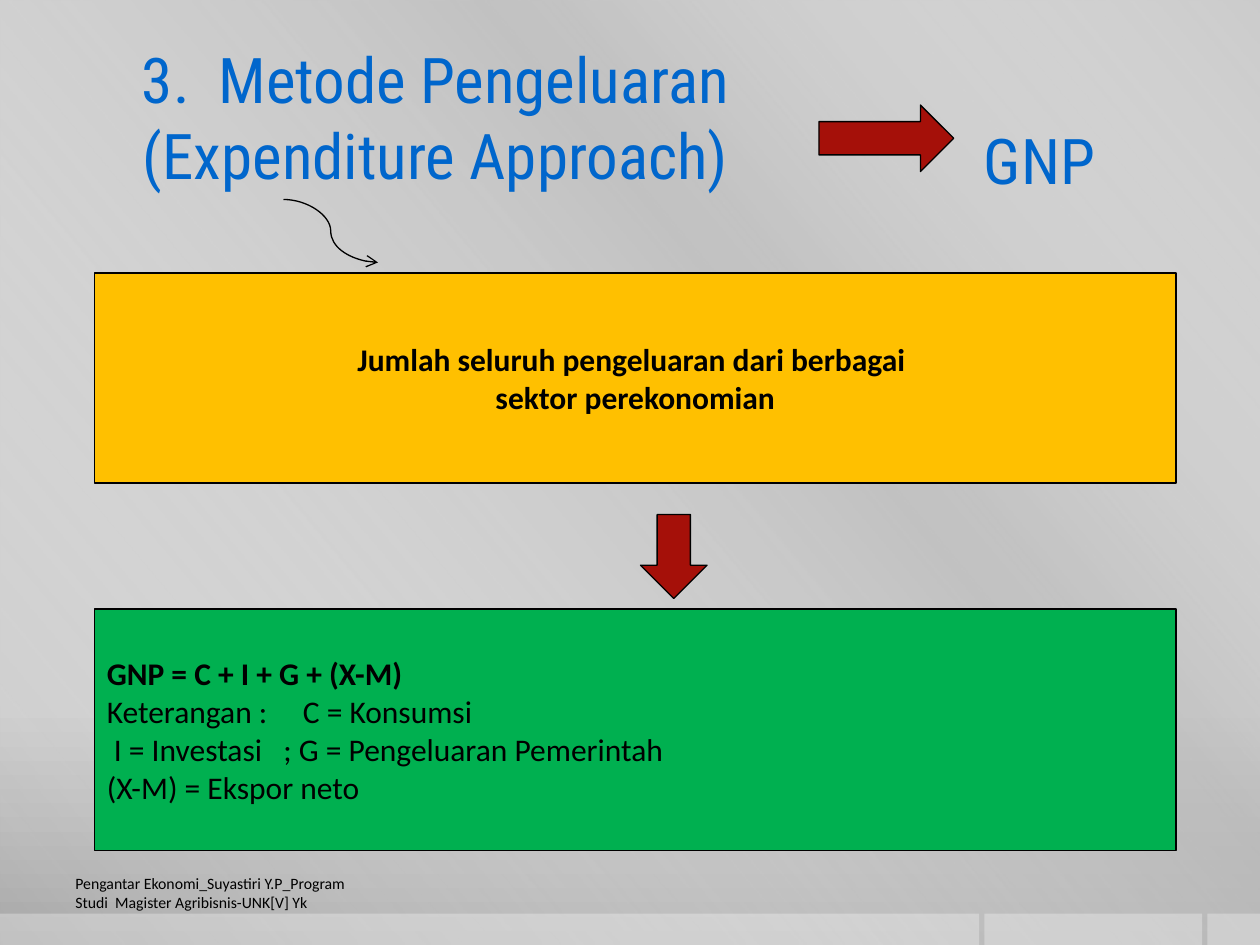
from collections import namedtuple
from dataclasses import dataclass

import pptx
import pptx.dml.color
import pptx.enum.shapes
import pptx.enum.text
import pptx.oxml
import pptx.oxml.ns
import pptx.util
from lxml import etree

Pt = pptx.util.Pt
qn = pptx.oxml.ns.qn
SHAPES = pptx.enum.shapes.MSO_SHAPE
ALIGN = pptx.enum.text.PP_ALIGN
ANCHOR = pptx.enum.text.MSO_ANCHOR
Box = namedtuple("Box", "left top width height")


@dataclass(frozen=True)
class Theme:
    heading_font: str = "Roboto Condensed"
    body_font: str = "Calibri"
    heading_size: float = 36
    body_size: float = 18
    footer_size: float = 9
    heading: str = "0066CC"
    heading_edge: str = "99CCFF"
    heading_edge_width: float = 1.5
    ink: str = "000000"
    line_width: float = 0.75
    arrow: str = "A51009"
    definition: str = "FFC000"
    formula: str = "00B050"
    floor: str = "FFFFFF"
    floor_opacity: int = 30
    backdrop: tuple = ((0, "CBCBCB", 100), (76, "C8C8C8", 100), (100, "A7A7A7", 100))
    sheen: tuple = ((0, "FFFFFF", 0), (34, "BFBFBF", 61), (38, "BFBFBF", 76), (100, "FFFFFF", 0))


THEME = Theme()


def color(value):
    return pptx.dml.color.RGBColor.from_string(value)


def points(box):
    return [Pt(length) for length in box]


def inside(box, left, top, width, height):
    return Box(box.left + left, box.top + top, width, height)


def set_gradient(element, stops, angle):
    gradient = next(element.iter(qn("a:gradFill")))
    stop_list = gradient.find(qn("a:gsLst"))
    for stop in list(stop_list):
        stop_list.remove(stop)
    for position, value, opacity in stops:
        stop = etree.SubElement(stop_list, qn("a:gs"), pos=str(position * 1000))
        tint = etree.SubElement(stop, qn("a:srgbClr"), val=value)
        etree.SubElement(tint, qn("a:alpha"), val=str(opacity * 1000))
    gradient.find(qn("a:lin")).set("ang", str(angle * 60000))


def add_block(page, box, kind, fill=None, outlined=True):
    shape = page.shapes.add_shape(kind, *points(box))
    shape.shadow.inherit = False
    if fill:
        shape.fill.solid()
        shape.fill.fore_color.rgb = color(fill)
    if outlined:
        shape.line.color.rgb = color(THEME.ink)
        shape.line.width = Pt(THEME.line_width)
    else:
        shape.line.fill.background()
    return shape


def add_span(para, text, size, font, tint, bold=False):
    span = para.add_run()
    span.text = text
    span.font.size = Pt(size)
    span.font.name = font
    span.font.bold = bold
    span.font.color.rgb = color(tint)
    return span


def write_lines(frame, lines, size=THEME.body_size, align=ALIGN.LEFT):
    frame.word_wrap = True
    frame.vertical_anchor = ANCHOR.MIDDLE
    for index, (text, bold) in enumerate(lines):
        para = frame.paragraphs[0] if index == 0 else frame.add_paragraph()
        para.alignment = align
        add_span(para, text, size, THEME.body_font, THEME.ink, bold)


def write_heading(frame, lines, anchor):
    frame.word_wrap = True
    frame.vertical_anchor = anchor
    para = frame.paragraphs[0]
    para.alignment = ALIGN.CENTER
    for index, text in enumerate(lines):
        if index:
            para.add_line_break()
        span = add_span(para, text, THEME.heading_size, THEME.heading_font, THEME.heading)
        edge = pptx.oxml.parse_xml(
            f'<a:ln {pptx.oxml.ns.nsdecls("a")} w="{int(Pt(THEME.heading_edge_width))}">'
            f'<a:solidFill><a:srgbClr val="{THEME.heading_edge}"/></a:solidFill></a:ln>'
        )
        span.font.fill.solid()
        span.font.color.rgb = color(THEME.heading)
        next(para.runs[-1].font.fill for _ in [0])
        para.runs[-1]._r.get_or_add_rPr().insert(0, edge)


def add_backdrop(page, box):
    page.background.fill.gradient()
    set_gradient(page.element, THEME.backdrop, 90)
    sheen = add_block(page, box, SHAPES.RECTANGLE, outlined=False)
    sheen.fill.gradient()
    set_gradient(sheen.element, THEME.sheen, 140)
    height = 18
    for left, right in ((0, 559.5), (562.5, 687), (690, box.width)):
        tile_box = inside(box, left, box.height - height, right - left, height)
        tile = add_block(page, tile_box, SHAPES.RECTANGLE, THEME.floor, False)
        tint = next(tile.element.spPr.iter(qn("a:srgbClr")))
        etree.SubElement(tint, qn("a:alpha"), val=str(THEME.floor_opacity * 1000))


def add_header(page, box):
    title = page.shapes.title
    title.left, title.top, title.width, title.height = points(inside(box, 0, 0, 426, 90))
    write_heading(title.text_frame, ["3.  Metode Pengeluaran", "(Expenditure Approach)"], ANCHOR.MIDDLE)
    result = page.shapes.add_textbox(*points(inside(box, 516, 44.5, 84, 54)))
    write_heading(result.text_frame, ["GNP"], ANCHOR.TOP)
    add_block(page, inside(box, 432, 38.5, 77, 38), SHAPES.RIGHT_ARROW, THEME.arrow)


def add_definition(page, box):
    block = add_block(page, box, SHAPES.RECTANGLE, THEME.definition)
    lines = [("Jumlah seluruh pengeluaran dari berbagai ", True), ("sektor perekonomian", True)]
    write_lines(block.text_frame, lines, align=ALIGN.CENTER)


def add_formula(page, box):
    block = add_block(page, box, SHAPES.RECTANGLE, THEME.formula)
    lines = [
        ("GNP = C + I + G + (X-M)", True),
        ("Keterangan :     C = Konsumsi", False),
        (" I = Investasi   ; G = Pengeluaran Pemerintah", False),
        ("(X-M) = Ekspor neto", False),
    ]
    write_lines(block.text_frame, lines)


def add_curve(page, box):
    curve = page.shapes.add_connector(
        pptx.enum.shapes.MSO_CONNECTOR.CURVE,
        *points((box.left, box.top, box.left + box.width, box.top + box.height)),
    )
    curve.line.color.rgb = color(THEME.ink)
    curve.line.width = Pt(THEME.line_width)
    properties = curve.element.spPr
    etree.SubElement(properties.find(qn("a:ln")), qn("a:tailEnd"), type="arrow")
    etree.SubElement(properties, qn("a:effectLst"))


def add_footer(page, box):
    footer = page.shapes.add_textbox(*points(box))
    text = "Pengantar Ekonomi_Suyastiri Y.P_Program Studi  Magister Agribisnis-UNK[V] Yk"
    write_lines(footer.text_frame, [(text, False)], THEME.footer_size)


def main():
    deck = pptx.Presentation()
    deck.slide_width, deck.slide_height = Pt(720), Pt(540)
    page = deck.slides.add_slide(deck.slide_layouts.get_by_name("Title Only"))
    add_backdrop(page, Box(0, 0, 720, 540))
    title = page.shapes.title.element
    title.getparent().append(title)
    add_footer(page, Box(36, 492, 168, 36))
    add_header(page, Box(36, 21.5, 600, 98.5))
    add_formula(page, Box(54, 348, 618, 138))
    add_definition(page, Box(54, 156, 618, 120))
    add_curve(page, Box(162, 114, 54, 36))
    add_block(page, Box(366, 294, 38, 48), SHAPES.DOWN_ARROW, THEME.arrow)
    deck.save("out.pptx")


if __name__ == "__main__":
    main()
